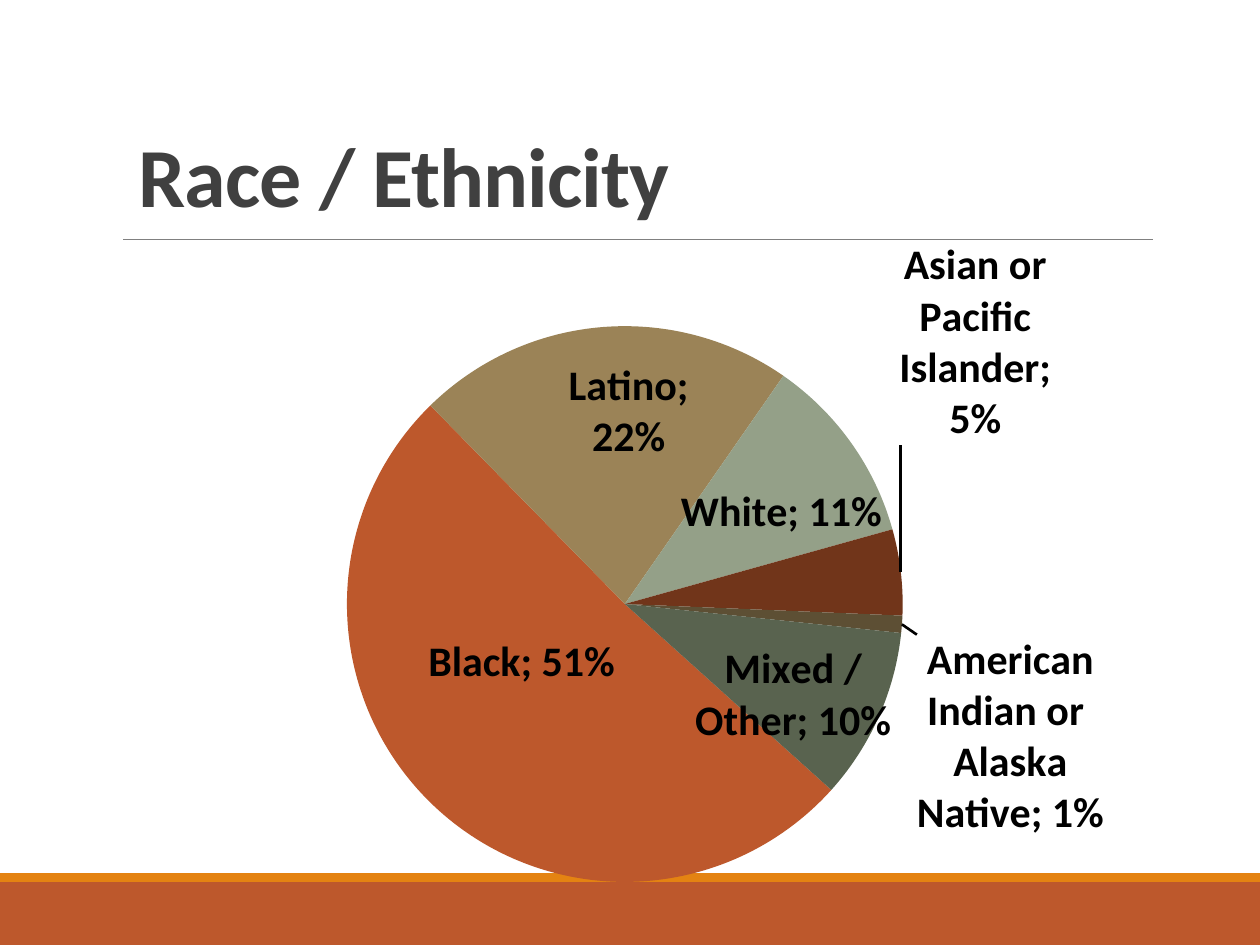
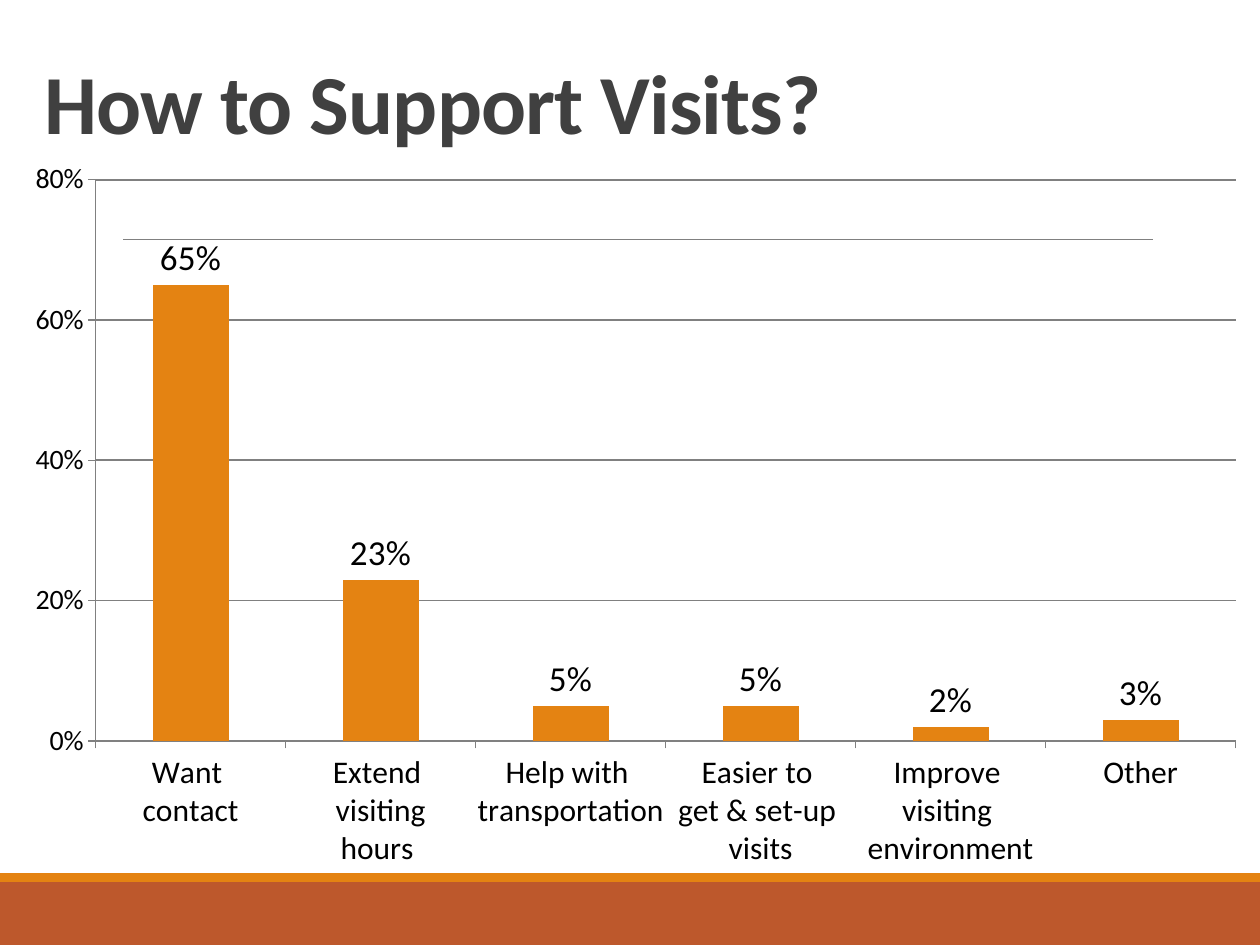
from lxml import etree
from pptx import Presentation
from pptx import util as u
from pptx.chart import data
from pptx.dml.color import RGBColor
from pptx.enum import chart as ch, shapes, text
from pptx.oxml import parse_xml
from pptx.oxml.ns import nsdecls, qn

FONT = "Calibri"
RUST, ORANGE, GREY, TITLE_GREY, BLACK = "BD582C", "E48312", "808080", "404040", "000000"


def colour(value):
    return RGBColor.from_string(value)


def set_plot_area(chart, x, y, w, h):
    plot_area = chart._chartSpace.chart.plotArea
    for old in plot_area.findall(qn("c:layout")):
        plot_area.remove(old)
    plot_area.insert(0, parse_xml(
        f'<c:layout {nsdecls("c")}><c:manualLayout><c:layoutTarget val="inner"/>'
        f'<c:xMode val="edge"/><c:yMode val="edge"/><c:x val="{x}"/><c:y val="{y}"/>'
        f'<c:w val="{w}"/><c:h val="{h}"/></c:manualLayout></c:layout>'))


prs = Presentation()
prs.slide_width, prs.slide_height = u.Inches(10), u.Inches(7.5)
title_only = prs.slide_layouts[5]

pages = []
for heading, left, top, width in [
    ("Race / Ethnicity", 1, 0.58, 9),
    ("How to Support Visits?", 0.25, 0, 9.5),
]:
    page = prs.slides.add_slide(title_only)
    title = page.shapes.title
    title.left, title.top = u.Inches(left), u.Inches(top)
    title.width, title.height = u.Inches(width), u.Inches(1.25)
    frame = title.text_frame
    frame.word_wrap = True
    frame.auto_size = text.MSO_AUTO_SIZE.NONE
    frame.vertical_anchor = text.MSO_ANCHOR.BOTTOM
    line = frame.paragraphs[0]
    line.alignment = text.PP_ALIGN.LEFT
    line.line_spacing = 0.85
    run = line.add_run()
    run.text = heading
    run.font.name, run.font.size, run.font.bold = FONT, u.Pt(48), True
    run.font.color.rgb = colour(TITLE_GREY)
    run.font._element.set("spc", "-50")
    pages.append(page)
race_page, visits_page = pages

master_tree = prs.slide_master.shapes._spTree
rule = race_page.shapes.add_connector(
    shapes.MSO_CONNECTOR.STRAIGHT, u.Inches(0.98), u.Inches(1.9), u.Inches(9.15), u.Inches(1.9))
rule.line.color.rgb = colour(GREY)
rule.line.width = u.Pt(0.5)
etree.SubElement(rule._element.spPr, qn("a:effectLst"))
master_tree.insert(2, rule._element)
for top, height, fill in [(6.93, 0.07, ORANGE), (7, 0.5, RUST)]:
    band = race_page.shapes.add_shape(
        shapes.MSO_SHAPE.RECTANGLE, 0, u.Inches(top), u.Inches(10), u.Inches(height))
    band.shadow.inherit = False
    band.fill.solid()
    band.fill.fore_color.rgb = colour(fill)
    band.line.fill.background()
    master_tree.insert(2, band._element)

groups = [
    ("Black", 0.51, RUST, (1.49, -1.37), "; "),
    ("Latino", 0.22, "9B8357", (0.22, 1.14), ";\n"),
    ("White", 0.11, "94A088", (-1.4, 0.79), "; "),
    ("Asian or\nPacific Islander", 0.05, "71351A", (-0.07, -1), "; "),
    ("American Indian or \nAlaska Native", 0.01, "5D4F34", (0.06, 0.89), "; "),
    ("Mixed / Other", 0.1, "59634F", (-1.51, -0.6), "; "),
]
support = [
    ("Want \ncontact", 0.65),
    ("Extend \nvisiting\nhours ", 0.23),
    ("Help with \ntransportation", 0.05),
    ("Easier to \nget & set-up \nvisits", 0.05),
    ("Improve \nvisiting \nenvironment", 0.02),
    ("Other", 0.03),
]

PIE_BOX = (1.02, 1.58, 8.25, 5.67)
COLUMN_BOX = (0.08, 1.17, 9.92, 5.83)
charts = []
for page, kind, rows, box in [
    (race_page, ch.XL_CHART_TYPE.PIE, groups, PIE_BOX),
    (visits_page, ch.XL_CHART_TYPE.COLUMN_CLUSTERED, support, COLUMN_BOX),
]:
    figures = data.CategoryChartData(number_format="0%")
    figures.categories = [row[0] for row in rows]
    figures.add_series("Series 1", [row[1] for row in rows])
    chart = page.shapes.add_chart(kind, *[u.Inches(n) for n in box], figures).chart
    chart.has_title = chart.has_legend = False
    chart.font.name, chart.font.size = FONT, u.Pt(10)
    chart.font.color.rgb = colour(BLACK)
    charts.append(chart)
race_chart, visits_chart = charts

set_plot_area(race_chart, 0.21, 0.178, 0.535, 0.778)
pie = race_chart.plots[0]
pie.vary_by_categories = True
for old in pie._element.findall(qn("c:firstSliceAng")):
    pie._element.remove(old)
etree.SubElement(pie._element, qn("c:firstSliceAng")).set("val", "132")

slices = pie.series[0]
labels = slices.data_labels
labels.show_value = labels.show_category_name = True
labels.number_format, labels.number_format_is_linked = "0%", False
labels.font.name, labels.font.size, labels.font.bold = FONT, u.Pt(24), True
labels.font.color.rgb = colour(BLACK)
labels.position = ch.XL_LABEL_POSITION.BEST_FIT

for i, (name, share, fill, (right, down), separator) in enumerate(groups):
    point = slices.points[i]
    point.format.fill.solid()
    point.format.fill.fore_color.rgb = colour(fill)
    point.format.line.fill.background()
    labels._element.insert(i, parse_xml(
        f'<c:dLbl {nsdecls("c", "a")}><c:idx val="{i}"/><c:layout><c:manualLayout>'
        f'<c:x val="{right / PIE_BOX[2]:.4f}"/><c:y val="{down / PIE_BOX[3]:.4f}"/>'
        f'</c:manualLayout></c:layout>'
        f'<c:numFmt formatCode="0%" sourceLinked="0"/><c:spPr><a:noFill/></c:spPr>'
        f'<c:txPr><a:bodyPr/><a:p><a:pPr><a:defRPr sz="2400" b="1"><a:solidFill>'
        f'<a:srgbClr val="{BLACK}"/></a:solidFill><a:latin typeface="{FONT}"/></a:defRPr></a:pPr>'
        f'<a:endParaRPr lang="en-US"/></a:p></c:txPr><c:dLblPos val="bestFit"/>'
        f'<c:showLegendKey val="0"/><c:showVal val="1"/><c:showCatName val="1"/>'
        f'<c:showSerName val="0"/><c:showPercent val="0"/><c:showBubbleSize val="0"/>'
        f'<c:separator>{separator}</c:separator></c:dLbl>'))

for old in labels._element.findall(qn("c:showLeaderLines")):
    labels._element.remove(old)
etree.SubElement(labels._element, qn("c:separator")).text = "; "
etree.SubElement(labels._element, qn("c:showLeaderLines")).set("val", "1")
labels._element.append(parse_xml(
    f'<c:leaderLines {nsdecls("c", "a")}><c:spPr><a:ln w="19050"><a:solidFill>'
    f'<a:srgbClr val="{BLACK}"/></a:solidFill></a:ln></c:spPr></c:leaderLines>'))

set_plot_area(visits_chart, 0.0685, 0.044, 0.912, 0.764)
columns = visits_chart.plots[0]
columns.vary_by_categories = False
columns.gap_width = 150
bars = columns.series[0]
bars.format.fill.solid()
bars.format.fill.fore_color.rgb = colour(ORANGE)
bars.data_labels.show_value = True
bars.data_labels.number_format, bars.data_labels.number_format_is_linked = "0%", False
bars.data_labels.font.size = u.Pt(20)
bars.data_labels.position = ch.XL_LABEL_POSITION.OUTSIDE_END

percent, answers = visits_chart.value_axis, visits_chart.category_axis
for axis, size in [(percent, 16), (answers, 18)]:
    axis.tick_labels.font.size = u.Pt(size)
    axis.major_tick_mark = ch.XL_TICK_MARK.OUTSIDE
    axis.minor_tick_mark = ch.XL_TICK_MARK.NONE
    axis.format.line.color.rgb = colour(GREY)
    axis.format.line.width = u.Pt(0.75)
percent.minimum_scale, percent.maximum_scale, percent.major_unit = 0, 0.8, 0.2
percent.tick_labels.number_format, percent.tick_labels.number_format_is_linked = "0%", False
percent.has_major_gridlines = True
percent.major_gridlines.format.line.color.rgb = colour(GREY)
percent.major_gridlines.format.line.width = u.Pt(1)

prs.save("out.pptx")
